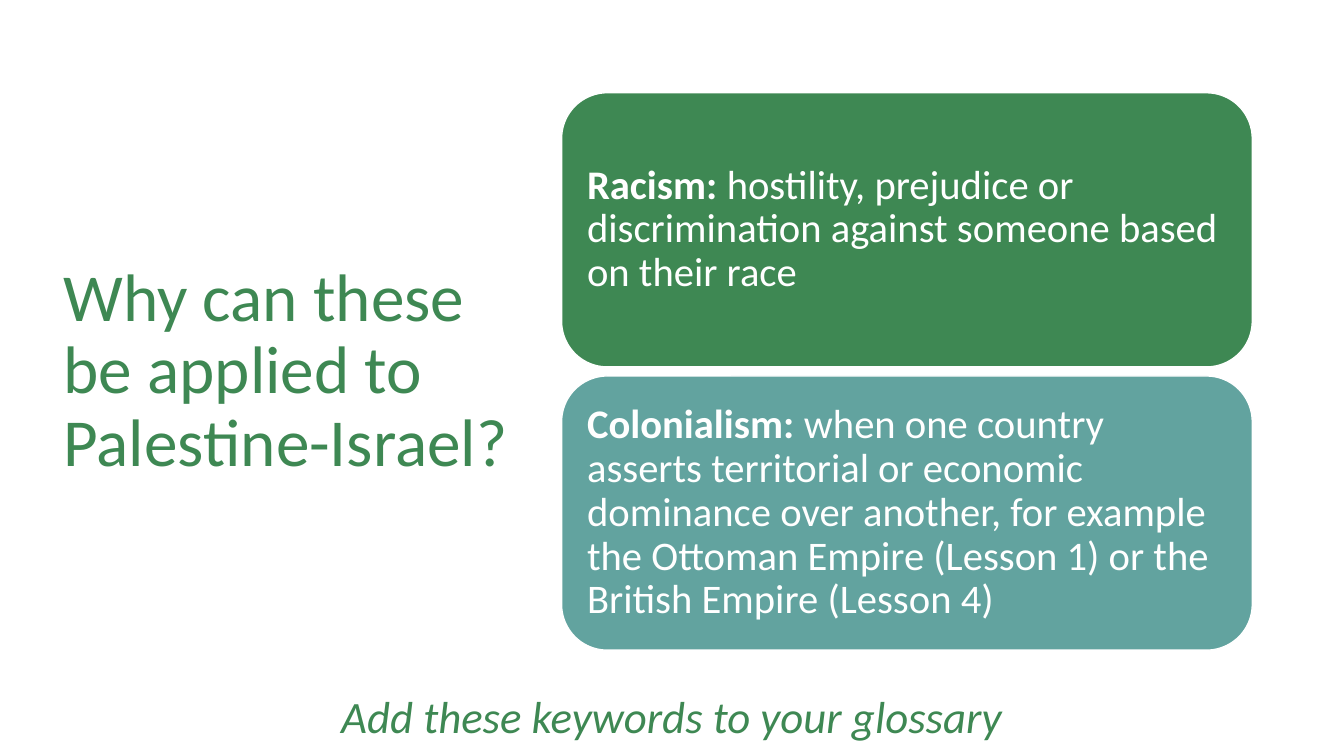
from dataclasses import dataclass

import pptx
import pptx.dml.color
import pptx.enum.shapes
import pptx.enum.text
import pptx.util

PX = 9144


@dataclass(frozen=True)
class Theme:
    font: str = "Calibri"
    green: str = "3E8853"
    teal: str = "62A39F"
    white: str = "FFFFFF"
    title_size: int = 48
    card_size: int = 29
    footer_size: int = 32


@dataclass(frozen=True)
class Keyword:
    term: str
    meaning: str
    fill: str


THEME = Theme()
KEYWORDS = [
    Keyword("Racism: ",
            "hostility, prejudice or discrimination against someone based on their race",
            THEME.green),
    Keyword("Colonialism: ",
            "when one country asserts territorial or economic dominance over another, "
            "for example the Ottoman Empire (Lesson 1) or the British Empire (Lesson 4)",
            THEME.teal),
]
SLIDE_W, SLIDE_H = 1333, 750
CARD_X, CARD_Y, CARD_W, CARD_H = 557, 92, 685, 272
CARD_PITCH = 281
CARD_INSET = 12


def px(n: int) -> pptx.util.Emu:
    return pptx.util.Emu(n * PX)


def rgb(value: str) -> pptx.dml.color.RGBColor:
    return pptx.dml.color.RGBColor.from_string(value)


def add_run(p, text: str, size: int, color: str,
            bold: bool = False, italic: bool = False) -> None:
    r = p.add_run()
    r.text = text
    r.font.name = THEME.font
    r.font.size = pptx.util.Pt(size)
    r.font.color.rgb = rgb(color)
    r.font.bold = bold
    r.font.italic = italic


def add_title(s, text: str) -> None:
    sp = s.shapes.title
    sp.left, sp.top, sp.width, sp.height = map(px, (53, 68, 470, 602))
    tf = sp.text_frame
    tf.word_wrap = True
    tf.auto_size = pptx.enum.text.MSO_AUTO_SIZE.NONE
    tf.vertical_anchor = pptx.enum.text.MSO_ANCHOR.MIDDLE
    p = tf.paragraphs[0]
    p.alignment = pptx.enum.text.PP_ALIGN.LEFT
    p.line_spacing = 0.9
    add_run(p, text, THEME.title_size, THEME.green)


def add_card(s, keyword: Keyword, top: int) -> None:
    sp = s.shapes.add_shape(pptx.enum.shapes.MSO_SHAPE.ROUNDED_RECTANGLE,
                            px(CARD_X), px(top), px(CARD_W), px(CARD_H))
    sp.shadow.inherit = False
    sp.fill.solid()
    sp.fill.fore_color.rgb = rgb(keyword.fill)
    sp.line.color.rgb = rgb(THEME.white)
    sp.line.width = pptx.util.Pt(1)
    tf = sp.text_frame
    tf.word_wrap = True
    tf.vertical_anchor = pptx.enum.text.MSO_ANCHOR.MIDDLE
    tf.margin_left = tf.margin_right = px(CARD_INSET)
    tf.margin_top = tf.margin_bottom = px(CARD_INSET)
    p = tf.paragraphs[0]
    p.alignment = pptx.enum.text.PP_ALIGN.LEFT
    p.line_spacing = 0.9
    add_run(p, keyword.term, THEME.card_size, THEME.white, bold=True)
    add_run(p, keyword.meaning, THEME.card_size, THEME.white)


def add_footer(s, text: str) -> None:
    sp = s.shapes.add_textbox(px(0), px(678), px(SLIDE_W), px(64))
    tf = sp.text_frame
    tf.word_wrap = True
    tf.auto_size = pptx.enum.text.MSO_AUTO_SIZE.SHAPE_TO_FIT_TEXT
    p = tf.paragraphs[0]
    p.alignment = pptx.enum.text.PP_ALIGN.CENTER
    add_run(p, text, THEME.footer_size, THEME.green, italic=True)


def main() -> None:
    prs = pptx.Presentation()
    prs.slide_width, prs.slide_height = px(SLIDE_W), px(SLIDE_H)
    s = prs.slides.add_slide(prs.slide_layouts.get_by_name("Title Only"))
    add_title(s, "Why can these be applied to Palestine-Israel?")
    for i, keyword in enumerate(KEYWORDS):
        add_card(s, keyword, CARD_Y + i * CARD_PITCH)
    add_footer(s, "Add these keywords to your glossary")
    prs.save("out.pptx")


if __name__ == "__main__":
    main()
